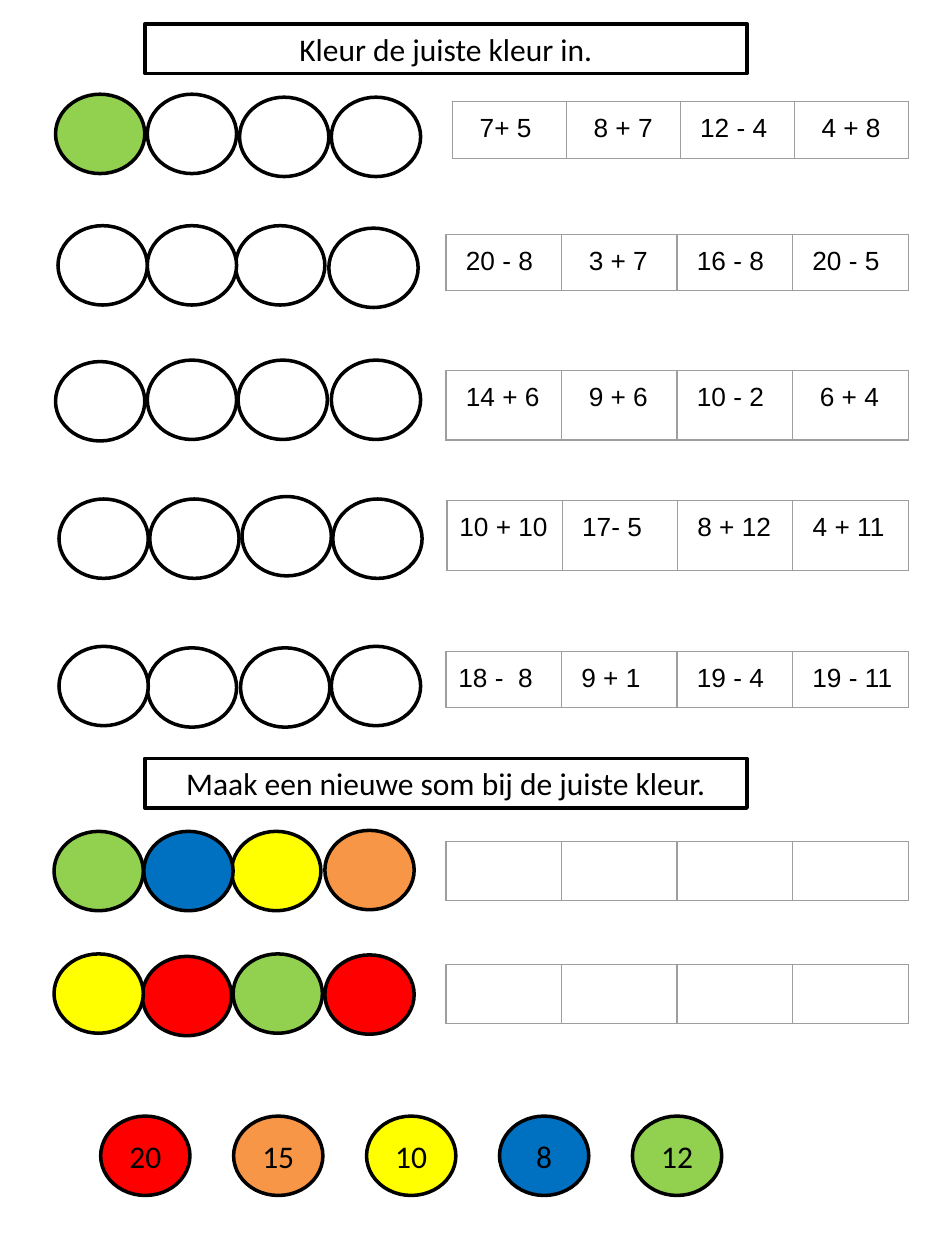
from lxml import etree
from pptx import Presentation
from pptx.dml.color import RGBColor
from pptx.enum.shapes import MSO_SHAPE as SHAPE
from pptx.enum.text import MSO_ANCHOR as ANCHOR, MSO_AUTO_SIZE as AUTOSIZE, PP_ALIGN as ALIGN
from pptx.oxml.ns import qn
from pptx.util import Cm, Pt

COLORS = {
    "white": "FFFFFF", "black": "000000", "grid": "9E9E9E",
    "green": "92D050", "blue": "0070C0", "yellow": "FFFF00",
    "orange": "F79646", "red": "FF0000",
}
CIRCLE_W, CIRCLE_H = 1.8, 1.6
TABLE_RIGHT = 18.31
CELL_MARGIN = 0.25
INDENT = 0.15  # one step of extra space before a sum


def rgb(name):
    return RGBColor.from_string(COLORS[name])


def write(tf, text, *, font="Calibri", size=18, color="black", align=ALIGN.CENTER):
    p = tf.paragraphs[0]
    p.alignment = align
    r = p.add_run()
    r.text = text
    r.font.name = font
    r.font.size = Pt(size)
    r.font.color.rgb = rgb(color)


class Worksheet:
    def __init__(self, slide, line_width=2):
        self.s = slide
        self.line_width = Pt(line_width)

    def outline(self, sp, fill):
        sp.fill.solid()
        sp.fill.fore_color.rgb = rgb(fill)
        sp.line.color.rgb = rgb("black")
        sp.line.width = self.line_width

    def place_heading(self, sp, top, text):
        sp.left, sp.top, sp.width, sp.height = Cm(2.92), Cm(top), Cm(12.14), Cm(1)
        self.outline(sp, "white")
        tf = sp.text_frame
        tf.auto_size = AUTOSIZE.NONE
        tf.word_wrap = True
        tf.vertical_anchor = ANCHOR.MIDDLE
        write(tf, text)

    def title(self, top, text):
        self.place_heading(self.s.shapes.title, top, text)

    def heading(self, top, text):
        sp = self.s.shapes.add_shape(SHAPE.RECTANGLE, 0, 0, Cm(1), Cm(1))
        sp.shadow.inherit = False
        self.place_heading(sp, top, text)

    def circle(self, left, top, fill="white", text=None):
        sp = self.s.shapes.add_shape(
            SHAPE.OVAL, Cm(left), Cm(top), Cm(CIRCLE_W), Cm(CIRCLE_H))
        sp.shadow.inherit = False
        self.outline(sp, fill)
        if text:
            sp.text_frame.vertical_anchor = ANCHOR.MIDDLE
            write(sp.text_frame, text)

    def circle_row(self, lefts, tops, fills):
        # Right to left, so that each circle lies over its right neighbour
        for left, top, fill in reversed(list(zip(lefts, tops, fills))):
            self.circle(left, top, fill)

    def borders(self, cell):
        tcPr = cell._tc.get_or_add_tcPr()
        for i, side in enumerate(("a:lnL", "a:lnR", "a:lnT", "a:lnB")):
            ln = etree.Element(qn(side), w=str(Pt(0.75)))
            solid = etree.SubElement(ln, qn("a:solidFill"))
            etree.SubElement(solid, qn("a:srgbClr"), val=COLORS["grid"])
            tcPr.insert(i, ln)

    def sum_table(self, left, top, height, sums):
        width = TABLE_RIGHT - left
        table = self.s.shapes.add_table(
            1, len(sums), Cm(left), Cm(top), Cm(width), Cm(height)).table
        table.first_row = table.horz_banding = False
        for column, cell, (text, steps) in zip(table.columns, table.iter_cells(), sums):
            column.width = Cm(width / len(sums))
            cell.fill.background()
            self.borders(cell)
            if text:
                cell.margin_left = Cm(CELL_MARGIN + steps * INDENT)
                cell.margin_right = cell.margin_top = cell.margin_bottom = Cm(CELL_MARGIN)
                write(cell.text_frame, text, font="Arial", size=15, align=ALIGN.LEFT)


WHITE = ["white"] * 4
EMPTY = [("", 0)] * 4

# Each row: circle lefts, tops and fills, then table left, top, height and
# sums, each sum with its number of indent steps
ROWS = [
    ((1.12, 2.97, 4.83, 6.68), (1.9, 1.9, 1.96, 1.96), ["green"] + WHITE[1:],
     9.12, 2.04, 1.15, [("7+ 5", 2), ("8 + 7", 2), ("12 - 4", 1), ("4 + 8", 2)]),
    ((1.17, 2.97, 4.75, 6.63), (4.55, 4.55, 4.55, 4.6), WHITE,
     8.99, 4.73, 1.13, [("20 - 8", 1), ("3 + 7", 2), ("16 - 8", 1), ("20 - 5", 1)]),
    ((1.12, 2.97, 4.8, 6.68), (7.29, 7.26, 7.26, 7.26), WHITE,
     8.99, 7.47, 1.4, [("14 + 6", 1), ("9 + 6", 2), ("10 - 2", 1), ("6 + 4", 2)]),
    ((1.19, 3.02, 4.88, 6.71), (10.06, 10.06, 10.01, 10.06), WHITE,
     9.01, 10.09, 1.41, [("10 + 10", 0), ("17- 5", 1), ("8 + 12", 1), ("4 + 11", 1)]),
    ((1.19, 2.97, 4.85, 6.68), (13.03, 13.06, 13.06, 13.03), WHITE,
     8.99, 13.14, 1.13, [("18 -  8", 0), ("9 + 1", 1), ("19 - 4", 1), ("19 - 11", 1)]),
    ((1.09, 2.9, 4.67, 6.55), (16.76, 16.76, 16.76, 16.74),
     ["green", "blue", "yellow", "orange"], 8.99, 16.97, 1.18, EMPTY),
    ((1.09, 2.87, 4.7, 6.55), (19.23, 19.28, 19.23, 19.25),
     ["yellow", "red", "green", "red"], 8.99, 19.45, 1.18, EMPTY),
]
LEGEND = [("20", "red"), ("15", "orange"), ("10", "yellow"), ("8", "blue"), ("12", "green")]


def main():
    prs = Presentation()
    prs.slide_width, prs.slide_height = Cm(19.05), Cm(25.4)
    sheet = Worksheet(prs.slides.add_slide(prs.slide_layouts[5]))

    # Instructions
    sheet.title(0.48, "Kleur de juiste kleur in.")
    sheet.heading(15.29, "Maak een nieuwe som bij de juiste kleur.")

    # Circles with their sums
    for lefts, tops, fills, left, top, height, sums in ROWS:
        sheet.circle_row(lefts, tops, fills)
        sheet.sum_table(left, top, height, sums)

    # Colour key
    for i, (answer, color) in enumerate(LEGEND):
        sheet.circle(2.03 + i * 2.68, 22.5, color, answer)

    prs.save("out.pptx")


if __name__ == "__main__":
    main()
